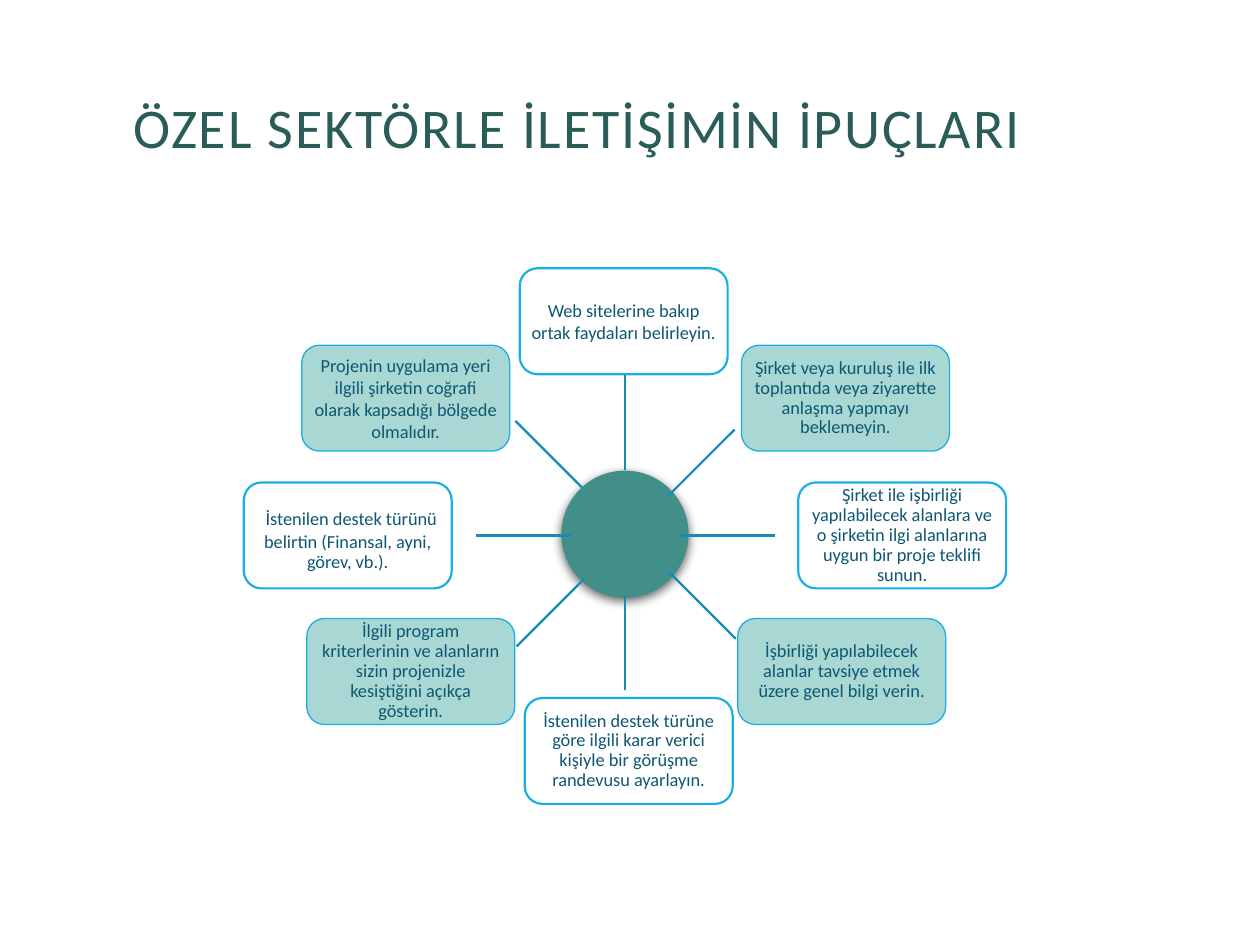
from math import cos, radians, sin

from lxml.etree import SubElement
from pptx import Presentation
from pptx.dml.color import RGBColor
from pptx.enum.shapes import MSO_CONNECTOR, MSO_SHAPE
from pptx.enum.text import MSO_ANCHOR, PP_ALIGN
from pptx.oxml.ns import qn
from pptx.util import Inches, Pt

COLUMNS, ROWS = 100, 75
SLIDE_WIDTH, SLIDE_HEIGHT = Inches(10), Inches(7.5)
FONT = "Calibri"
COLORS = {
    "title": "2A5C58", "hub": "428F89", "shadow": "000000", "spoke": "168BB7",
    "border": "1CADE4", "plain": "FFFFFF", "tinted": "A9D7D4", "tip": "0E5772",
}
HUB_SIZE = 10.1
CARD_WIDTH, CARD_HEIGHT = 16.5, 8.4
SPOKE_LENGTH = 7.5

TIPS = [
    (-0.1, -16.9, "plain", 1, "Web sitelerine bakıp ortak faydaları belirleyin."),
    (17.5, -10.8, "tinted", 0.9,
     "Şirket veya kuruluş ile ilk toplantıda veya ziyarette anlaşma yapmayı beklemeyin."),
    (22, 0.1, "plain", 0.9,
     "Şirket ile işbirliği yapılabilecek alanlara ve o şirketin ilgi alanlarına "
     "uygun bir proje teklifi sunun."),
    (17.2, 10.9, "tinted", 0.9,
     "İşbirliği yapılabilecek alanlar tavsiye etmek üzere genel bilgi verin."),
    (0.3, 17.2, "plain", 0.9,
     "İstenilen destek türüne göre ilgili karar verici kişiyle bir görüşme randevusu ayarlayın."),
    (-17, 10.9, "tinted", 0.9,
     "İlgili program kriterlerinin ve alanların sizin projenizle kesiştiğini açıkça gösterin."),
    (-22, 0.1, "plain", 0.9,
     "İstenilen destek türünü belirtin (Finansal, ayni, görev, vb.)."),
    (-17.4, -10.8, "tinted", 1,
     "Projenin uygulama yeri ilgili şirketin coğrafi olarak kapsadığı bölgede olmalıdır."),
]
SPOKE_STARTS = [(0, -5.1), (3.4, -3), (4.4, 0.1), (3.5, 3),
                (0, 4.9), (-3.3, 3.6), (-4.3, 0.1), (-3.4, -3.7)]


def color(name):
    return RGBColor.from_string(COLORS[name])


def across(columns):
    return int(SLIDE_WIDTH * columns / COLUMNS)


def down(rows):
    return int(SLIDE_HEIGHT * rows / ROWS)


def place(left, top, width, height):
    return across(left), down(top), across(width), down(height)


def add_run(paragraph, wording, size, color_name):
    run = paragraph.add_run()
    run.text = wording
    run.font.name = FONT
    run.font.size = Pt(size)
    run.font.color.rgb = color(color_name)
    return run


def add_title(slide, box, wording):
    frame = slide.shapes.add_textbox(*place(*box)).text_frame
    frame.word_wrap = True
    frame.vertical_anchor = MSO_ANCHOR.MIDDLE
    paragraph = frame.paragraphs[0]
    paragraph.line_spacing = 0.8
    run = add_run(paragraph, wording, 32, "title")
    run.font._element.set("spc", "100")


def add_card(slide, center_x, center_y, fill, spacing, wording):
    card = slide.shapes.add_shape(
        MSO_SHAPE.ROUNDED_RECTANGLE,
        *place(center_x - CARD_WIDTH / 2, center_y - CARD_HEIGHT / 2, CARD_WIDTH, CARD_HEIGHT))
    card.shadow.inherit = False
    card.fill.solid()
    card.fill.fore_color.rgb = color(fill)
    card.line.color.rgb = color("border")
    card.line.width = Pt(1.25 if fill == "plain" else 0.75)
    frame = card.text_frame
    frame.word_wrap = True
    frame.vertical_anchor = MSO_ANCHOR.MIDDLE
    frame.margin_left = frame.margin_right = across(0.5)
    frame.margin_top = frame.margin_bottom = down(0.5)
    paragraph = frame.paragraphs[0]
    paragraph.alignment = PP_ALIGN.CENTER
    paragraph.line_spacing = spacing
    if wording.endswith("vb.)."):
        add_run(paragraph, " ", 18, "tip")
    add_run(paragraph, wording, 10.5, "tip")


def add_hub(slide, center_x, center_y):
    hub = slide.shapes.add_shape(
        MSO_SHAPE.OVAL,
        *place(center_x - HUB_SIZE / 2, center_y - HUB_SIZE / 2, HUB_SIZE, HUB_SIZE))
    hub.fill.solid()
    hub.fill.fore_color.rgb = color("hub")
    hub.line.fill.background()
    effects = SubElement(hub._element.spPr, qn("a:effectLst"))
    shadow = SubElement(effects, qn("a:outerShdw"), blurRad=str(Pt(6)),
                        dist=str(Pt(2)), dir="5400000", rotWithShape="0")
    shade = SubElement(shadow, qn("a:srgbClr"), val=COLORS["shadow"])
    SubElement(shade, qn("a:alpha"), val="60000")


def add_spoke(slide, start_x, start_y, angle):
    end_x = start_x + SPOKE_LENGTH * cos(angle)
    end_y = start_y + SPOKE_LENGTH * sin(angle)
    spoke = slide.shapes.add_connector(
        MSO_CONNECTOR.STRAIGHT, across(start_x), down(start_y), across(end_x), down(end_y))
    spoke.line.color.rgb = color("spoke")
    spoke.line.width = Pt(1.25)
    SubElement(spoke._element.spPr, qn("a:effectLst"))


def add_wheel(slide, box):
    left, top, width, height = box
    center_x, center_y = left + width / 2, top + height / 2
    for x, y, *card in TIPS:
        add_card(slide, center_x + x, center_y + y, *card)
    add_hub(slide, center_x, center_y)
    for step, (x, y) in enumerate(SPOKE_STARTS):
        add_spoke(slide, center_x + x, center_y + y, radians(45 * step - 90))


def main():
    presentation = Presentation()
    presentation.slide_width, presentation.slide_height = SLIDE_WIDTH, SLIDE_HEIGHT
    slide = presentation.slides.add_slide(presentation.slide_layouts[6])
    add_title(slide, (9.6, 2.3, 79.7, 16.4), "ÖZEL SEKTÖRLE İLETİŞİMİN İPUÇLARI")
    add_wheel(slide, (19.4, 21.2, 60.4, 42.4))
    presentation.save("out.pptx")


if __name__ == "__main__":
    main()
